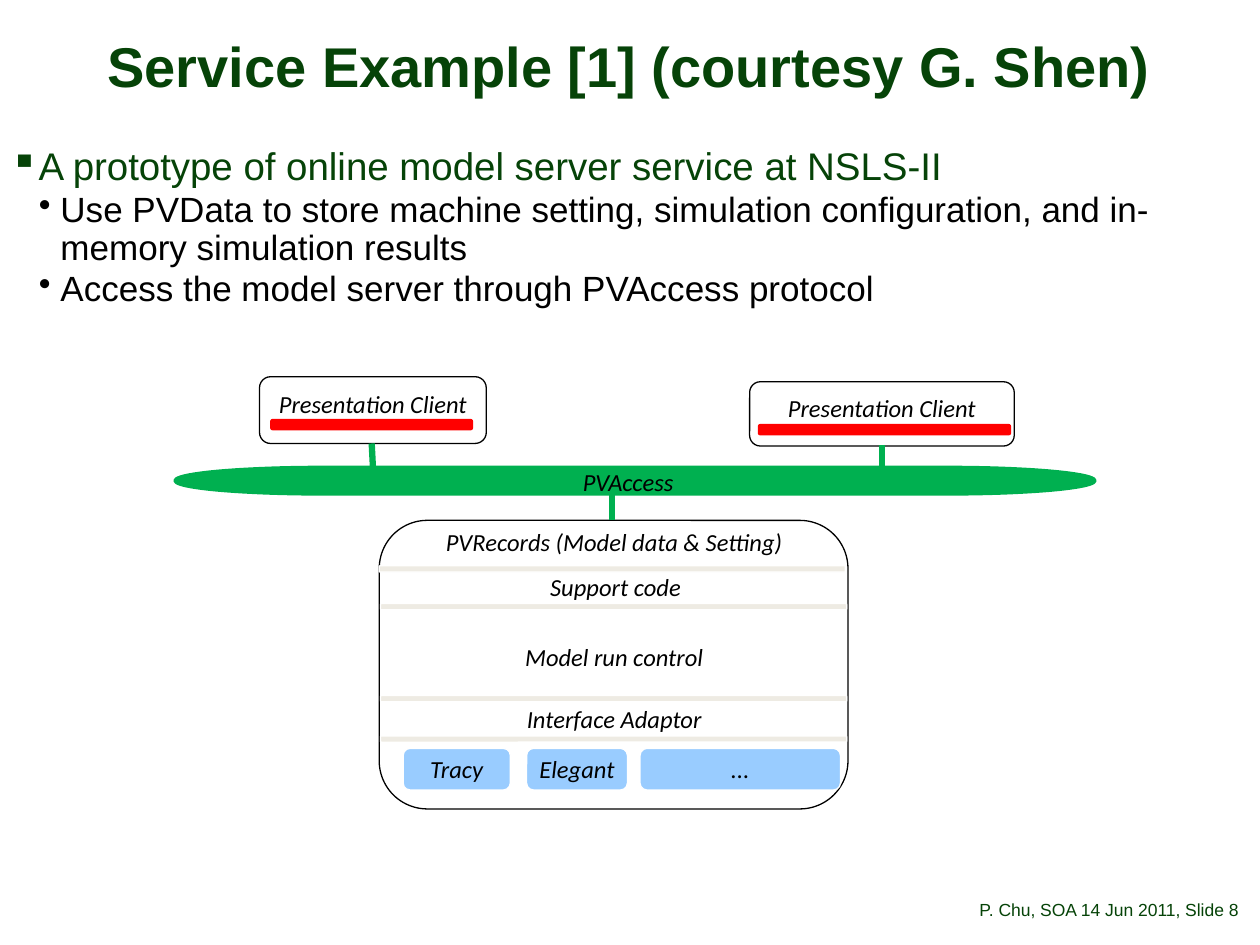
"""Build the slide on the online model server service example."""
from typing import NamedTuple, Optional

from lxml.etree import SubElement
from pptx import Presentation
from pptx.dml.color import RGBColor
from pptx.enum.shapes import MSO_CONNECTOR, MSO_SHAPE
from pptx.enum.text import MSO_ANCHOR, PP_ALIGN
from pptx.oxml.ns import qn
from pptx.slide import Slide
from pptx.text.text import TextFrame
from pptx.util import Pt

EMU_PER_PX = 9144
DARK_GREEN = RGBColor(0x06, 0x43, 0x08)
BUS_GREEN = RGBColor(0x00, 0xB0, 0x50)
SKY = RGBColor(0x99, 0xCC, 0xFF)
SAND = RGBColor(0xEE, 0xEB, 0xE3)
RED = RGBColor(0xFF, 0x00, 0x00)
BLACK = RGBColor(0x00, 0x00, 0x00)
WHITE = RGBColor(0xFF, 0xFF, 0xFF)


class Box(NamedTuple):
    left: int
    top: int
    width: int
    height: int


class Insets(NamedTuple):
    left: int = 0
    top: int = 0
    right: int = 0
    bottom: int = 0


class Style(NamedTuple):
    size: int
    color: RGBColor
    font: str = "Arial"
    bold: bool = False
    italic: bool = False
    align: PP_ALIGN = PP_ALIGN.LEFT
    spacing: Optional[float] = None


class Bullet(NamedTuple):
    text: str
    mark: str
    level: int
    indent: int
    hang: int
    before: int
    style: Style


class Panel(NamedTuple):
    box: Box
    fill: RGBColor
    line: RGBColor
    text: str = ""
    insets: Insets = Insets()
    preset: MSO_SHAPE = MSO_SHAPE.ROUNDED_RECTANGLE
    line_width: float = 0.75


class Label(NamedTuple):
    box: Box
    text: str
    style: Style
    insets: Insets
    anchor: MSO_ANCHOR = MSO_ANCHOR.TOP


class Link(NamedTuple):
    x1: int
    y1: int
    x2: int
    y2: int


TITLE = Style(32, DARK_GREEN, bold=True, align=PP_ALIGN.CENTER, spacing=0.88)
TOPIC = Style(22, DARK_GREEN, spacing=0.9)
DETAIL = Style(20, BLACK, spacing=0.9)
FOOTER = Style(10, DARK_GREEN, spacing=0.9)
FOOTER_RIGHT = FOOTER._replace(align=PP_ALIGN.RIGHT)
DIAGRAM = Style(14, BLACK, "Calibri", italic=True, align=PP_ALIGN.CENTER)

CLIENT_INSETS = Insets(10, 0, 10, 10)
ENGINE_INSETS = Insets(9, 4, 9, 4)
LAYER_INSETS = Insets(9, 5, 9, 5)

BODY_BOX = Box(8, 117, 983, 217)
BULLETS = [
    Bullet("A prototype of online model server service at NSLS-II", "▪", 0, 20, 20, 0, TOPIC),
    Bullet("Use PVData to store machine setting, simulation configuration, and "
           "in-memory simulation results", "•", 1, 40, 17, 2, DETAIL),
    Bullet("Access the model server through PVAccess protocol", "•", 1, 40, 17, 2, DETAIL),
]
HEADINGS = [
    Label(Box(8, 29, 983, 52), "Service Example [1] (courtesy G. Shen)", TITLE,
          Insets(6, 2, 6, 2), MSO_ANCHOR.MIDDLE),
    Label(Box(616, 695, 317, 40), "P. Chu, SOA 14 Jun 2011", FOOTER_RIGHT,
          Insets(0, 5, 0, 5), MSO_ANCHOR.BOTTOM),
    Label(Box(933, 695, 67, 40), ", Slide 8", FOOTER, Insets(bottom=5), MSO_ANCHOR.BOTTOM),
]
CLIENTS = [
    Panel(box, WHITE, BLACK, "Presentation Client", CLIENT_INSETS)
    for box in (Box(206, 299, 180, 53), Box(595, 303, 210, 51))
]
SERVER = Panel(Box(301, 413, 372, 229), WHITE, BLACK)
ENGINES = [
    Panel(Box(left, 594, width, 33), SKY, WHITE, name, ENGINE_INSETS)
    for left, width, name in ((320, 85, "Tracy"), (418, 80, "Elegant"), (508, 159, "..."))
]
BUS = Panel(Box(139, 371, 730, 21), BUS_GREEN, BUS_GREEN,
            preset=MSO_SHAPE.FLOWCHART_TERMINATOR, line_width=2)
LAYERS = [
    Label(Box(left, top, 369, 33), name, DIAGRAM, LAYER_INSETS)
    for left, top, name in (
        (303, 413, "PVRecords (Model data & Setting)"),
        (304, 449, "Support code"),
        (303, 505, "Model run control"),
        (303, 554, "Interface Adaptor"),
        (314, 366, "PVAccess"),
    )
]
CLIENT_BARS = [
    Panel(box, RED, RED) for box in (Box(215, 333, 160, 8), Box(602, 337, 200, 8))
]
DIVIDERS = [
    Panel(Box(left, top, 370, 5), SAND, WHITE)
    for left, top in ((301, 449), (302, 479), (302, 552), (302, 584))
]
LINKS = [Link(486, 392, 486, 413), Link(295, 352, 296, 371), Link(700, 353, 700, 372)]


def px(length: int) -> int:
    """Turn px into EMU."""
    return length * EMU_PER_PX


def set_frame(frame: TextFrame, insets: Insets, anchor: MSO_ANCHOR, wrap: bool) -> None:
    """Set the margins, anchor and wrapping of a text frame."""
    frame.margin_left, frame.margin_top, frame.margin_right, frame.margin_bottom = map(px, insets)
    frame.vertical_anchor = anchor
    frame.word_wrap = wrap


def write(paragraph, text: str, style: Style) -> None:
    """Add one styled run to a paragraph."""
    paragraph.alignment = style.align
    if style.spacing:
        paragraph.line_spacing = style.spacing
    run = paragraph.add_run()
    run.text = text
    run.font.name, run.font.size = style.font, Pt(style.size)
    run.font.bold, run.font.italic = style.bold, style.italic
    run.font.color.rgb = style.color


def draw_label(slide: Slide, label: Label) -> None:
    """Draw a text box with one paragraph."""
    frame = slide.shapes.add_textbox(*map(px, label.box)).text_frame
    set_frame(frame, label.insets, label.anchor, True)
    write(frame.paragraphs[0], label.text, label.style)


def draw_bullets(slide: Slide, box: Box, bullets: list[Bullet]) -> None:
    """Draw the bulleted list."""
    frame = slide.shapes.add_textbox(*map(px, box)).text_frame
    set_frame(frame, Insets(), MSO_ANCHOR.TOP, True)
    for index, bullet in enumerate(bullets):
        paragraph = frame.add_paragraph() if index else frame.paragraphs[0]
        paragraph.level = bullet.level
        paragraph.space_before = Pt(bullet.before)
        properties = paragraph._p.get_or_add_pPr()
        properties.set("marL", str(px(bullet.indent)))
        properties.set("indent", str(-px(bullet.hang)))
        SubElement(properties, qn("a:buChar")).set("char", bullet.mark)
        write(paragraph, bullet.text, bullet.style)


def draw_panel(slide: Slide, panel: Panel) -> None:
    """Draw a filled shape with its optional text."""
    shape = slide.shapes.add_shape(panel.preset, *map(px, panel.box))
    shape.shadow.inherit = False
    shape.fill.solid()
    shape.fill.fore_color.rgb = panel.fill
    shape.line.color.rgb = panel.line
    shape.line.width = Pt(panel.line_width)
    if panel.text:
        set_frame(shape.text_frame, panel.insets, MSO_ANCHOR.MIDDLE, False)
        write(shape.text_frame.paragraphs[0], panel.text, DIAGRAM)


def draw_link(slide: Slide, link: Link) -> None:
    """Draw a line to the bus."""
    connector = slide.shapes.add_connector(MSO_CONNECTOR.STRAIGHT, *map(px, link))
    connector.line.color.rgb = BUS_GREEN
    connector.line.width = Pt(3.6)
    SubElement(connector._element.spPr, qn("a:effectLst"))


def main() -> None:
    """Build and save the slide."""
    presentation = Presentation()
    presentation.slide_width, presentation.slide_height = px(1000), px(750)
    slide = presentation.slides.add_slide(presentation.slide_layouts[6])
    draw_bullets(slide, BODY_BOX, BULLETS)
    for heading in HEADINGS:
        draw_label(slide, heading)
    for panel in (SERVER, *ENGINES, *CLIENTS, BUS):
        draw_panel(slide, panel)
    for layer in LAYERS:
        draw_label(slide, layer)
    for bar in CLIENT_BARS:
        draw_panel(slide, bar)
    for link in LINKS:
        draw_link(slide, link)
    for divider in DIVIDERS:
        draw_panel(slide, divider)
    presentation.save("out.pptx")


if __name__ == "__main__":
    main()
